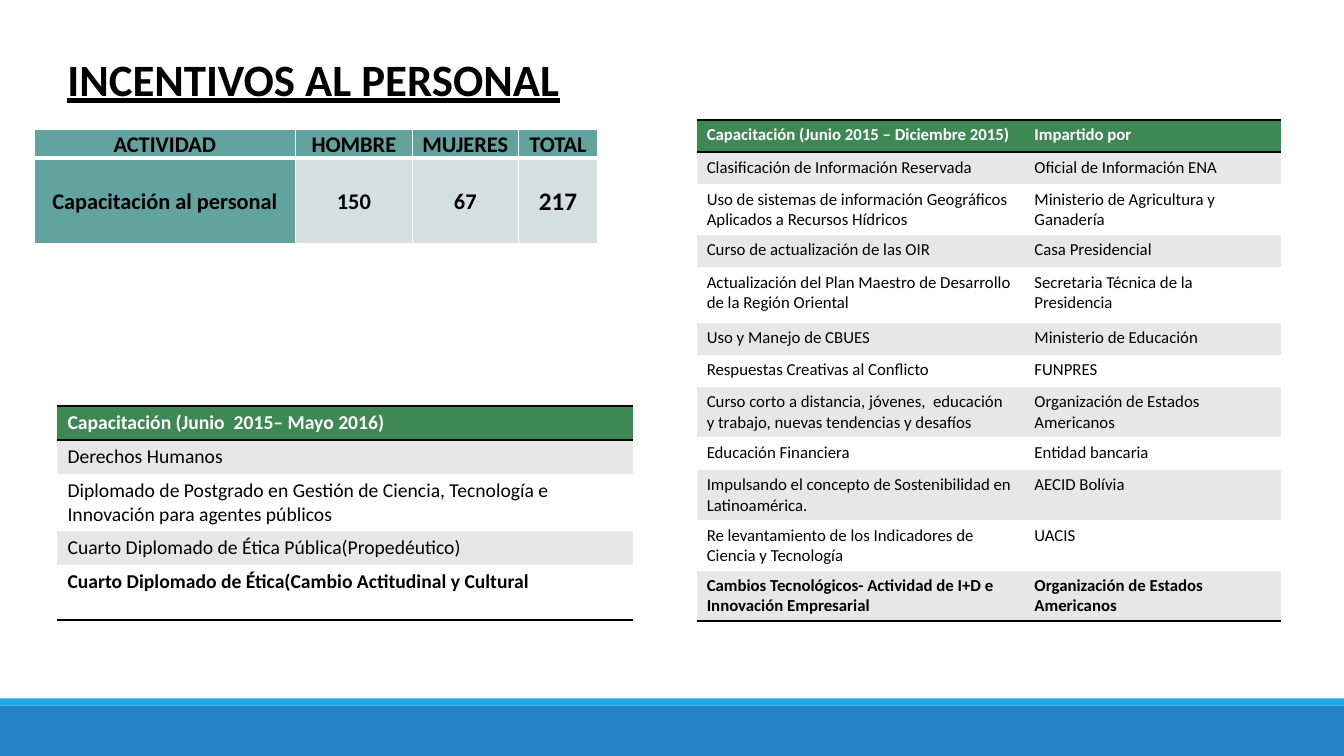
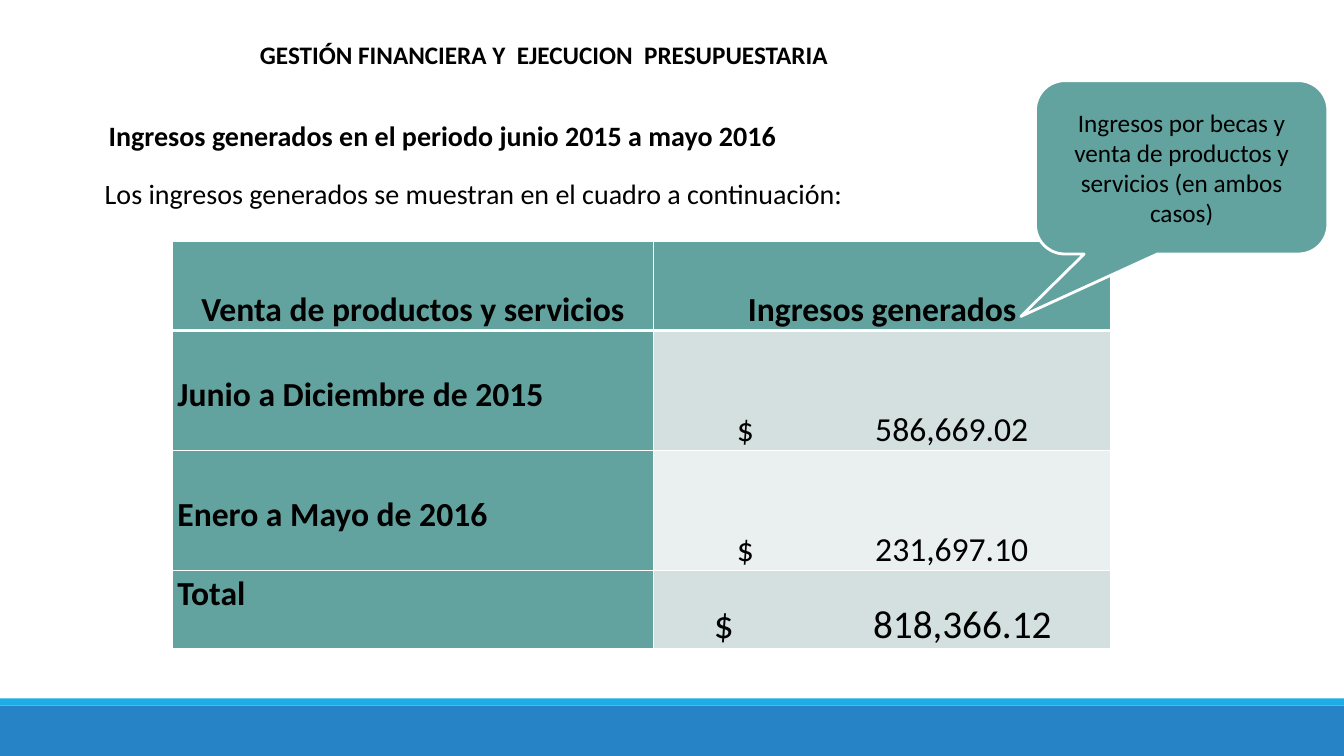
from lxml import etree
from pptx import Presentation
from pptx.dml.color import RGBColor
from pptx.enum import shapes, text
from pptx.oxml.ns import qn
from pptx.util import Inches, Pt

FONT = "Calibri"
WIDTH, HEIGHT = 13.33, 7.5
COLORS = {
    "black": "000000", "white": "FFFFFF", "blue": "2683C6", "cyan": "1CADE4",
    "green": "3E8853", "gray": "E7E7E7",
    "teal": "62A39F", "mist": "D3E0DF", "pale": "EAF0F0",
}
NO_STYLE = "{2D5ABB26-0587-4C30-8999-92F81FD0307C}"
LEFT, CENTER = text.PP_ALIGN.LEFT, text.PP_ALIGN.CENTER
TOP, MIDDLE, BOTTOM = text.MSO_ANCHOR.TOP, text.MSO_ANCHOR.MIDDLE, text.MSO_ANCHOR.BOTTOM

# Content: bands as (top, height, colour)
BANDS = [(7, 0.5, "blue"), (6.93, 0.07, "cyan")]

# Content: staff incentives
ACTIVITY = [
    ("ACTIVIDAD", "HOMBRE", "MUJERES", "TOTAL"),
    ("Capacitación al personal", "150", "67", "217"),
]
COURSES = [
    ("Capacitación (Junio 2015 – Diciembre 2015)", "Impartido por"),
    ("Clasificación de Información Reservada", "Oficial de Información ENA"),
    ("Uso de sistemas de información Geográficos Aplicados a Recursos Hídricos",
     "Ministerio de Agricultura y Ganadería"),
    ("Curso de actualización de las OIR", "Casa Presidencial"),
    ("Actualización del Plan Maestro de Desarrollo de la Región Oriental",
     "Secretaria Técnica de la Presidencia"),
    ("Uso y Manejo de CBUES", "Ministerio de Educación"),
    ("Respuestas Creativas al Conflicto", "FUNPRES"),
    ("Curso corto a distancia, jóvenes,  educación y trabajo, nuevas tendencias y desafíos",
     "Organización de Estados Americanos"),
    ("Educación Financiera", "Entidad bancaria"),
    ("Impulsando el concepto de Sostenibilidad en Latinoamérica.", "AECID Bolívia"),
    ("Re levantamiento de los Indicadores de Ciencia y Tecnología", "UACIS"),
    ("Cambios Tecnológicos- Actividad de I+D e Innovación Empresarial",
     "Organización de Estados Americanos"),
]
COURSE_ROWS = [0.32, 0.32, 0.5, 0.32, 0.55, 0.32, 0.32, 0.5, 0.32, 0.5, 0.5, 0.5]
DIPLOMAS = [
    ("Capacitación (Junio  2015– Mayo 2016)",),
    ("Derechos Humanos",),
    ("Diplomado de Postgrado en Gestión de Ciencia, Tecnología e Innovación para agentes públicos",),
    ("Cuarto Diplomado de Ética Pública(Propedéutico)",),
    ("Cuarto Diplomado de Ética(Cambio Actitudinal y Cultural",),
]

# Content: income
INCOME = [
    ("Venta de productos y servicios", "Ingresos generados"),
    ("Junio a Diciembre de 2015", "$\t586,669.02"),
    ("Enero a Mayo de 2016", "$\t231,697.10"),
    ("Total", "$\t818,366.12"),
]
CALLOUT = "Ingresos por becas y venta de productos y servicios (en ambos casos)"


def rgb(name):
    return RGBColor.from_string(COLORS[name])


def style_text(frame, size, color="black", bold=False, underline=False,
               align=LEFT, spacing=None):
    for paragraph in frame.paragraphs:
        paragraph.alignment = align
        if spacing:
            paragraph.line_spacing = spacing
        for run in paragraph.runs:
            run.font.name, run.font.size = FONT, Pt(size)
            run.font.bold, run.font.underline = bold, underline
            run.font.color.rgb = rgb(color)


def add_text(slide, words, left, top, width, height, size, **style):
    frame = slide.shapes.add_textbox(*map(Inches, (left, top, width, height))).text_frame
    frame.word_wrap = True
    frame.text = words
    style_text(frame, size, **style)


def add_box(slide, kind, box, fill):
    shape = slide.shapes.add_shape(kind, *map(Inches, box))
    shape.shadow.inherit = False
    shape.fill.solid()
    shape.fill.fore_color.rgb = rgb(fill)
    shape.line.fill.background()
    return shape


def add_master_bands(prs, slide):
    """Place the bottom bands on the master, so every slide shows them."""
    for number, (top, height, color) in enumerate(BANDS):
        band = add_box(slide, shapes.MSO_SHAPE.RECTANGLE, (0, top, WIDTH, height), color)
        band._element.nvSpPr.cNvPr.set("id", str(100 + number))
        prs.slide_master.shapes._spTree.append(band._element)


def set_borders(cell, borders):
    """borders maps a side (L, R, T, B) to (colour, points)."""
    props = cell._tc.get_or_add_tcPr()
    for side in "LRTB":
        color, points = borders.get(side, (None, 0))
        line = etree.SubElement(props, qn(f"a:ln{side}"), w=str(Pt(points)))
        if color:
            fill = etree.SubElement(line, qn("a:solidFill"))
            etree.SubElement(fill, qn("a:srgbClr"), val=COLORS[color])
        else:
            etree.SubElement(line, qn("a:noFill"))


def add_table(slide, rows, left, top, widths, heights, cell_style):
    """cell_style(row, column) gives fill, borders, anchor, margins and text style."""
    frame = slide.shapes.add_table(len(rows), len(widths), Inches(left), Inches(top),
                                   Inches(sum(widths)), Inches(sum(heights)))
    table = frame.table
    table._tbl.tblPr.find(qn("a:tableStyleId")).text = NO_STYLE
    for column, width in zip(table.columns, widths):
        column.width = Inches(width)
    for r, (row, height) in enumerate(zip(rows, heights)):
        table.rows[r].height = Inches(height)
        for c, words in enumerate(row):
            look = cell_style(r, c)
            cell = table.cell(r, c)
            cell.text = words
            set_borders(cell, look["borders"])
            cell.fill.solid()
            cell.fill.fore_color.rgb = rgb(look["fill"])
            cell.vertical_anchor = look.get("anchor", TOP)
            (cell.margin_left, cell.margin_top, cell.margin_right,
             cell.margin_bottom) = map(Inches, look.get("margins", (0.1, 0.05, 0.1, 0.05)))
            style_text(cell.text_frame, **look["text"])
    return table


def striped_style(size, last):
    """Green header, grey stripes, black rules and a bold last row."""
    def look(r, c):
        borders = {}
        if r == 0:
            borders["T"] = ("black", 2)
        if r in (0, last):
            borders["B"] = ("black", 2)
        if r == 1:
            borders["T"] = ("black", 2)
        fill = "green" if r == 0 else ("gray" if r % 2 else "white")
        return {"fill": fill, "borders": borders,
                "text": {"size": size, "bold": r in (0, last),
                         "color": "white" if r == 0 else "black"}}
    return look


def teal_look(r, c):
    """Teal header row and column, white grid."""
    borders = {side: ("white", 1) for side in "LRTB"}
    if r == 0:
        borders["B"] = ("white", 3)
    if r == 1:
        borders["T"] = ("white", 3)
    fill = "teal" if r == 0 or c == 0 else ("mist" if r % 2 else "pale")
    return {"fill": fill, "borders": borders}


def activity_style(r, c):
    return {**teal_look(r, c), "anchor": MIDDLE if r else TOP,
            "margins": (0.07, 0, 0.07, 0),
            "text": {"size": 18 if (r, c) == (1, 3) else 16, "bold": True,
                     "align": CENTER, "spacing": 1.07}}


def income_style(r, c):
    total = r == len(INCOME) - 1
    amount = r > 0 and c == 1
    left, bottom = 0.05, 0
    if amount:
        left = 0.6 if total else 0.83
    elif r > 0:
        bottom = 0.35
    return {**teal_look(r, c), "anchor": BOTTOM, "margins": (left, 0, 0.05, bottom),
            "text": {"size": 28 if amount and total else 24, "bold": not amount,
                     "align": LEFT if r else CENTER, "spacing": 1.07}}


def align_amount(cell, stop):
    """Right-align the figure at a tab stop after the currency sign."""
    props = cell.text_frame.paragraphs[0]._p.get_or_add_pPr()
    stops = etree.SubElement(props, qn("a:tabLst"))
    etree.SubElement(stops, qn("a:tab"), pos=str(Inches(stop)), algn="r")


def build_incentives(slide):
    add_text(slide, "INCENTIVOS AL PERSONAL", 0.57, 0.46, 5.2, 0.64, 32,
             bold=True, underline=True)
    add_table(slide, ACTIVITY, 0.34, 1.28, [2.59, 1.16, 1.05, 0.79], [0.29, 0.85],
              activity_style)
    add_table(slide, COURSES, 6.91, 1.19, [3.25, 2.55], COURSE_ROWS,
              striped_style(12, len(COURSES) - 1))
    add_table(slide, DIPLOMAS, 0.57, 4.03, [5.71], [0.33, 0.33, 0.57, 0.33, 0.55],
              striped_style(14, len(DIPLOMAS) - 1))


def build_income(slide):
    add_text(slide, "GESTIÓN FINANCIERA Y  EJECUCION  PRESUPUESTARIA",
             2.48, 0.34, 6.53, 0.4, 18, bold=True)
    add_text(slide, "Ingresos generados en el periodo junio 2015 a mayo 2016",
             0.98, 1.13, 8.03, 0.44, 20, bold=True)
    add_text(slide, "Los ingresos generados se muestran en el cuadro a continuación:",
             0.94, 1.65, 7.78, 0.47, 20, spacing=1.15)
    table = add_table(slide, INCOME, 1.71, 2.39, [4.77, 4.54], [0.89, 1.19, 1.19, 0.77],
                      income_style)
    for r, stop in enumerate((2.89, 2.89, 3.35), start=1):
        align_amount(table.cell(r, 1), stop)

    # Callout pointing at the income heading
    callout = add_box(slide, shapes.MSO_SHAPE.ROUNDED_RECTANGULAR_CALLOUT,
                      (10.27, 0.8, 2.9, 1.72), "teal")
    for i, value in enumerate((-0.55, 0.86, 0.17)):
        callout.adjustments[i] = value
    callout.line.color.rgb = rgb("white")
    callout.line.width = Pt(2)
    callout.text_frame.word_wrap = True
    callout.text_frame.vertical_anchor = MIDDLE
    callout.text_frame.text = CALLOUT
    style_text(callout.text_frame, 18, align=CENTER)


def main():
    prs = Presentation()
    prs.slide_width, prs.slide_height = Inches(WIDTH), Inches(HEIGHT)
    blank = prs.slide_layouts[6]
    incentives, income = (prs.slides.add_slide(blank) for _ in range(2))
    add_master_bands(prs, incentives)
    build_incentives(incentives)
    build_income(income)
    prs.save("out.pptx")


if __name__ == "__main__":
    main()
